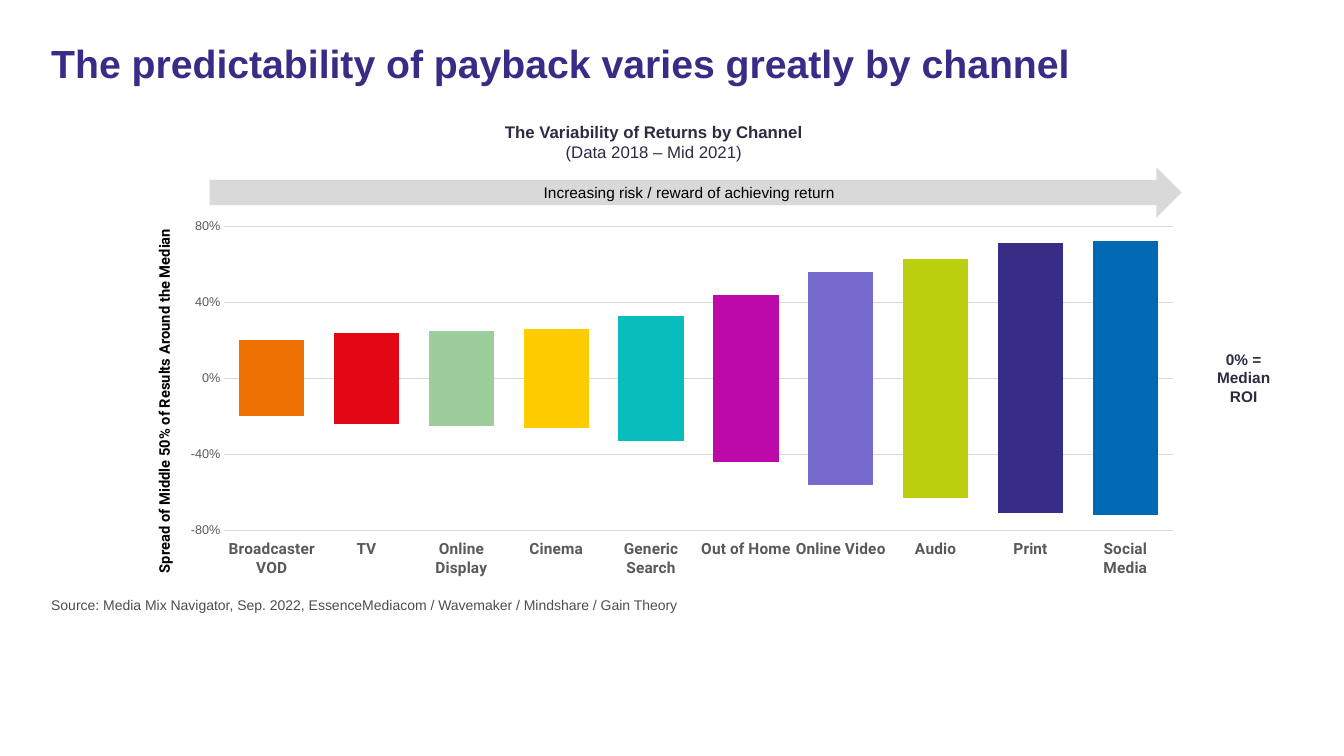
from lxml.etree import SubElement
from pptx import Presentation
from pptx.chart.data import CategoryChartData
from pptx.dml.color import RGBColor
from pptx.enum.chart import XL_CHART_TYPE, XL_TICK_LABEL_POSITION, XL_TICK_MARK
from pptx.enum.shapes import MSO_SHAPE
from pptx.enum.text import MSO_ANCHOR, PP_ALIGN
from pptx.oxml.ns import qn
from pptx.util import Inches, Pt

COLORS = {
    "title": "372D87", "ink": "2B2C41", "source": "4D4D4D",
    "label": "595959", "grid": "D9D9D9", "black": "000000",
}
CHANNELS = [
    ("Broadcaster VOD", 0.20, "EE7203"),
    ("TV", 0.24, "E30615"),
    ("Online Display", 0.25, "9CCD9A"),
    ("Cinema", 0.26, "FFCC00"),
    ("Generic Search", 0.33, "09BDBD"),
    ("Out of Home", 0.44, "BD09A7"),
    ("Online Video", 0.56, "766ACE"),
    ("Audio", 0.63, "BCCF0F"),
    ("Print", 0.71, "372D87"),
    ("Social Media", 0.72, "0069B4"),
]


def rgb(name):
    return RGBColor.from_string(COLORS[name])


def style_font(font, size, color, bold=False, name="Arial"):
    font.name = name
    font.size = Pt(size)
    font.bold = bold
    font.color.rgb = rgb(color)


def add_text(slide, box, lines, size, color, align=PP_ALIGN.LEFT, inset=None):
    tf = slide.shapes.add_textbox(*map(Inches, box)).text_frame
    tf.word_wrap = True
    if inset is not None:
        tf.margin_left = tf.margin_right = Inches(inset)
        tf.margin_top = tf.margin_bottom = Inches(inset)
    for i, (text, bold) in enumerate(lines):
        p = tf.add_paragraph() if i else tf.paragraphs[0]
        p.text = text
        p.alignment = align
        style_font(p.font, size, color, bold)
    return tf


def add_risk_arrow(slide):
    sp = slide.shapes.add_shape(
        MSO_SHAPE.RIGHT_ARROW, Inches(2.08), Inches(1.66), Inches(9.64), Inches(0.5))
    sp.shadow.inherit = False
    sp.fill.solid()
    sp.fill.fore_color.rgb = rgb("grid")
    sp.line.fill.background()
    tf = sp.text_frame
    tf.vertical_anchor = MSO_ANCHOR.MIDDLE
    p = tf.paragraphs[0]
    p.text = "Increasing risk / reward of achieving return"
    p.alignment = PP_ALIGN.CENTER
    style_font(p.font, 11, "black")


def set_layout(parent, **values):
    for old in parent.findall(qn("c:layout")):
        parent.remove(old)
    layout = SubElement(parent, qn("c:layout"))
    manual = SubElement(layout, qn("c:manualLayout"))
    for tag, value in values.items():
        SubElement(manual, qn(f"c:{tag}")).set("val", str(value))
    return layout


def style_axes(chart):
    cat, val = chart.category_axis, chart.value_axis
    for axis in (cat, val):
        axis.major_tick_mark = axis.minor_tick_mark = XL_TICK_MARK.NONE
    cat.tick_label_position = XL_TICK_LABEL_POSITION.LOW
    style_font(cat.tick_labels.font, 11, "label", True, "Roboto")
    val.minimum_scale, val.maximum_scale, val.major_unit = -0.8, 0.8, 0.4
    val.tick_labels.number_format = "0%"
    val.tick_labels.number_format_is_linked = False
    style_font(val.tick_labels.font, 9, "label")
    val.format.line.fill.background()
    for line in (cat.format.line, val.major_gridlines.format.line):
        line.color.rgb = rgb("grid")
        line.width = Pt(0.75)
    title = val.axis_title
    p = title.text_frame.paragraphs[0]
    p.text = "Spread of Middle 50% of Results Around the Median"
    style_font(p.font, 10.5, "black", True, "Roboto")
    el = title._element
    layout = set_layout(el, xMode="edge", yMode="edge", x=0.06, y=0.05)
    el.find(qn("c:tx")).addnext(layout)


def add_spread_chart(slide):
    data = CategoryChartData(number_format="0%")
    data.categories = [name for name, _, _ in CHANNELS]
    for name, sign in (("Series 1", 1), ("Series 2", -1)):
        data.add_series(name, [sign * spread for _, spread, _ in CHANNELS])
    chart = slide.shapes.add_chart(
        XL_CHART_TYPE.COLUMN_STACKED, Inches(0.84), Inches(2.02),
        Inches(11.08), Inches(4.49), data).chart
    chart.has_legend = False
    chart.has_title = False
    style_font(chart.font, 10, "black")
    plot = chart.plots[0]
    plot.gap_width, plot.overlap = 45, 100
    plot.vary_by_categories = False
    for series in plot.series:
        series.invert_if_negative = False
        for i, (_, _, color) in enumerate(CHANNELS):
            fill = series.points[i].format.fill
            fill.solid()
            fill.fore_color.rgb = RGBColor.from_string(color)
    style_axes(chart)
    area = chart._chartSpace.chart.plotArea
    area.insert(0, set_layout(
        area, layoutTarget="inner", xMode="edge", yMode="edge",
        x=0.125, y=0.05, w=0.849, h=0.672))


def main():
    prs = Presentation()
    prs.slide_width, prs.slide_height = Inches(13.33), Inches(7.5)
    slide = prs.slides.add_slide(prs.slide_layouts[6])
    add_risk_arrow(slide)
    title = add_text(
        slide, (0.41, 0.39, 12.4, 1.12),
        [("The predictability of payback varies greatly by channel", True)], 28, "title")
    title.paragraphs[0].line_spacing = 0.9
    add_text(
        slide, (0.41, 5.87, 12.4, 0.33),
        [("Source: Media Mix Navigator, Sep. 2022, EssenceMediacom / Wavemaker"
          " / Mindshare / Gain Theory", False)], 10, "source")
    add_spread_chart(slide)
    add_text(
        slide, (2.36, 1.16, 8.25, 0.5),
        [("The Variability of Returns by Channel", True),
         ("(Data 2018 – Mid 2021)", False)], 12, "ink", PP_ALIGN.CENTER)
    add_text(
        slide, (11.92, 3.47, 0.83, 0.56),
        [("0% = Median ROI", True)], 11, "ink", PP_ALIGN.CENTER, inset=0)
    prs.save("out.pptx")


if __name__ == "__main__":
    main()
